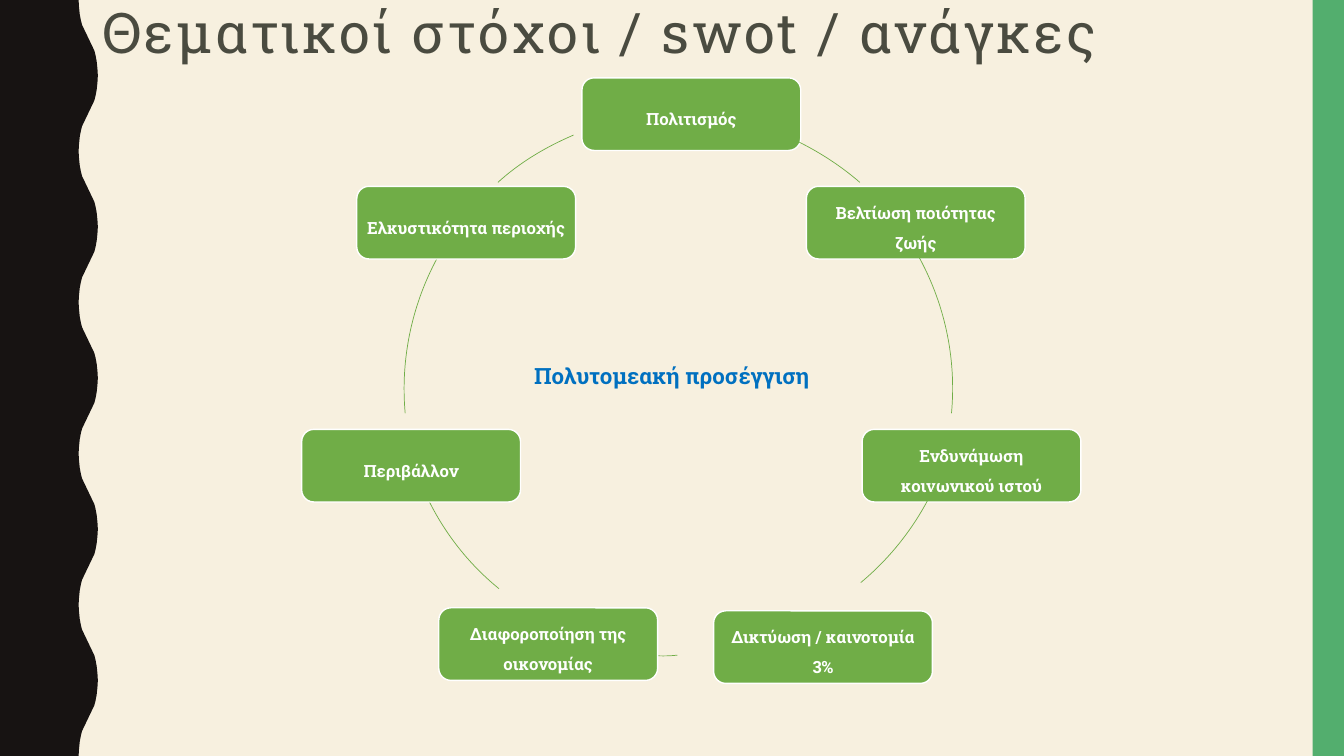
from lxml.etree import SubElement
from pptx import Presentation
from pptx.dml.color import RGBColor
from pptx.enum.shapes import MSO_SHAPE
from pptx.enum.text import MSO_ANCHOR, MSO_AUTO_SIZE, PP_ALIGN
from pptx.oxml.ns import qn
from pptx.util import Inches, Pt

COLORS = {
    "paper": "F7F0DF",
    "wave": "171312",
    "band": "53AE6E",
    "title": "4A4B40",
    "goal": "70AD47",
    "white": "FFFFFF",
    "center": "0070C0",
}

GOAL_SIZE = (16.28, 9.6)
GOALS = [
    ("Πολιτισμός", 43.3, 10.3),
    ("Βελτίωση ποιότητας ζωής", 60, 24.65),
    ("Ενδυνάμωση κοινωνικού ιστού", 64.15, 56.8),
    ("Δικτύωση / καινοτομία 3%", 53.1, 80.8),
    ("Διαφοροποίηση της οικονομίας", 32.65, 80.4),
    ("Περιβάλλον", 22.45, 56.8),
    ("Ελκυστικότητα περιοχής", 26.55, 24.65),
]
RING_SIZE = (42.75, 76)
RING = (30.08, 15.07)
ARCS = [
    (RING, [(58.35, 17.87), (60.38, 19.47), (62.25, 21.47), (63.98, 24.13)]),
    (RING, [(68.25, 33.6), (70.28, 40), (71.18, 47.33), (70.8, 54.67)]),
    ((30.6, 12.8), [(70.13, 61.87), (68.85, 67.87), (66.75, 73.07), (64.05, 77.07)]),
    ((28.95, 14.13), [(50.4, 86.67), (49.73, 86.8), (48.98, 86.8), (48.3, 86.67)]),
    ((29.7, 13.47), [(37.13, 77.87), (34.35, 73.87), (32.25, 68.53), (31.05, 62.67)]),
    (RING, [(30.15, 54.67), (29.78, 47.33), (30.68, 40), (32.7, 33.6)]),
    (RING, [(37.05, 24.13), (38.7, 21.47), (40.58, 19.47), (42.68, 17.87)]),
]
HALF_WAVE = [(0, 0), (0.09, 0.02), (0.19, 0.06), (0.27, 0.12), (0.33, 0.18),
             (0.67, 0.82), (0.73, 0.88), (0.81, 0.94), (0.91, 0.98)]


def color(name):
    return RGBColor.from_string(COLORS[name])


def write(frame, text, size, ink, bold=False, align=PP_ALIGN.LEFT,
          anchor=MSO_ANCHOR.TOP, spacing=1.0, after=0, tracking=0,
          insets=(0.1, 0.05)):
    frame.word_wrap = True
    frame.auto_size = MSO_AUTO_SIZE.NONE
    frame.vertical_anchor = anchor
    frame.margin_left = frame.margin_right = Inches(insets[0])
    frame.margin_top = frame.margin_bottom = Inches(insets[1])
    para = frame.paragraphs[0]
    para.alignment = align
    para.line_spacing = spacing
    para.space_before = Pt(0)
    para.space_after = Pt(after)
    span = para.add_run()
    span.text = text
    span.font.name = "Roboto Slab"
    span.font.size = Pt(size)
    span.font.bold = bold
    span.font.color.rgb = color(ink)
    if tracking:
        span._r.get_or_add_rPr().set("spc", str(tracking * 100))


class Page:
    """Draws styled elements on one slide, placed in percent of its size."""

    def __init__(self, deck):
        self.deck = deck
        self.slide = deck.slides.add_slide(deck.slide_layouts[5])
        self.shapes = self.slide.shapes
        self.slide.background.fill.solid()
        self.slide.background.fill.fore_color.rgb = color("paper")

    def point(self, x, y):
        return (round(self.deck.slide_width * x / 100),
                round(self.deck.slide_height * y / 100))

    def paint(self, shape, fill=None, line=None, width=1):
        shape.shadow.inherit = False
        if fill:
            shape.fill.solid()
            shape.fill.fore_color.rgb = color(fill)
        else:
            shape.fill.background()
        if line:
            shape.line.color.rgb = color(line)
            shape.line.width = Pt(width)
        else:
            shape.line.fill.background()

    def title(self, text, x, y, w, h):
        box = self.shapes.title
        box.left, box.top = self.point(x, y)
        box.width, box.height = self.point(w, h)
        write(box.text_frame, text, 40, "title", spacing=0.9, tracking=2)

    def block(self, kind, x, y, w, h, **style):
        box = self.shapes.add_shape(kind, *self.point(x, y), *self.point(w, h))
        self.paint(box, **style)
        return box

    def goal(self, text, x, y):
        box = self.block(MSO_SHAPE.ROUNDED_RECTANGLE, x, y, *GOAL_SIZE,
                         fill="goal", line="white")
        write(box.text_frame, text, 12, "white", bold=True,
              align=PP_ALIGN.CENTER, anchor=MSO_ANCHOR.MIDDLE, spacing=1.5,
              insets=(0.05, 0.05))

    def label(self, text, x, y, w, h):
        box = self.shapes.add_textbox(*self.point(x, y), *self.point(w, h))
        write(box.text_frame, text, 16, "center", bold=True,
              align=PP_ALIGN.CENTER, spacing=1.07, after=8)

    def outline(self, points, close, **style):
        start, *rest = [self.point(*point) for point in points]
        builder = self.shapes.build_freeform(*start)
        builder.add_line_segments(rest, close=close)
        shape = builder.convert_to_shape()
        self.paint(shape, **style)
        return shape

    def arc(self, corner, controls):
        x, y = corner
        opposite = (x + RING_SIZE[0], y + RING_SIZE[1])
        ring = self.outline([corner, opposite], False, line="goal", width=0.5)
        route = next(ring._element.iter(qn("a:path")))
        for segment in list(route):
            route.remove(segment)
        for tag, points in (("a:moveTo", controls[:1]), ("a:cubicBezTo", controls[1:])):
            segment = SubElement(route, qn(tag))
            for px, py in points:
                across, down = self.point(px - x, py - y)
                SubElement(segment, qn("a:pt"), x=str(across), y=str(down))

    def wave(self, inner, outer, halves):
        edge = []
        for half in range(halves):
            start, end = (outer, inner) if half % 2 else (inner, outer)
            edge += [(start + (end - start) * swing, 100 * (half + along) / halves)
                     for along, swing in HALF_WAVE]
        self.outline([(0, 0), *edge, (inner, 100), (0, 100)], True, fill="wave")


def main():
    deck = Presentation()
    deck.slide_width, deck.slide_height = Inches(13.33), Inches(7.5)
    page = Page(deck)
    page.wave(5.85, 7.28, 10)
    page.block(MSO_SHAPE.RECTANGLE, 97.67, 0, 2.33, 100, fill="band")
    page.title("Θεματικοί στόχοι / swot / ανάγκες", 6.9, 0, 86.25, 11.2)
    for goal, arc in zip(GOALS, ARCS):
        page.goal(*goal)
        page.arc(*arc)
    page.label("Πολυτομεακή προσέγγιση", 38.6, 47.05, 22.8, 10)
    deck.save("out.pptx")


if __name__ == "__main__":
    main()
